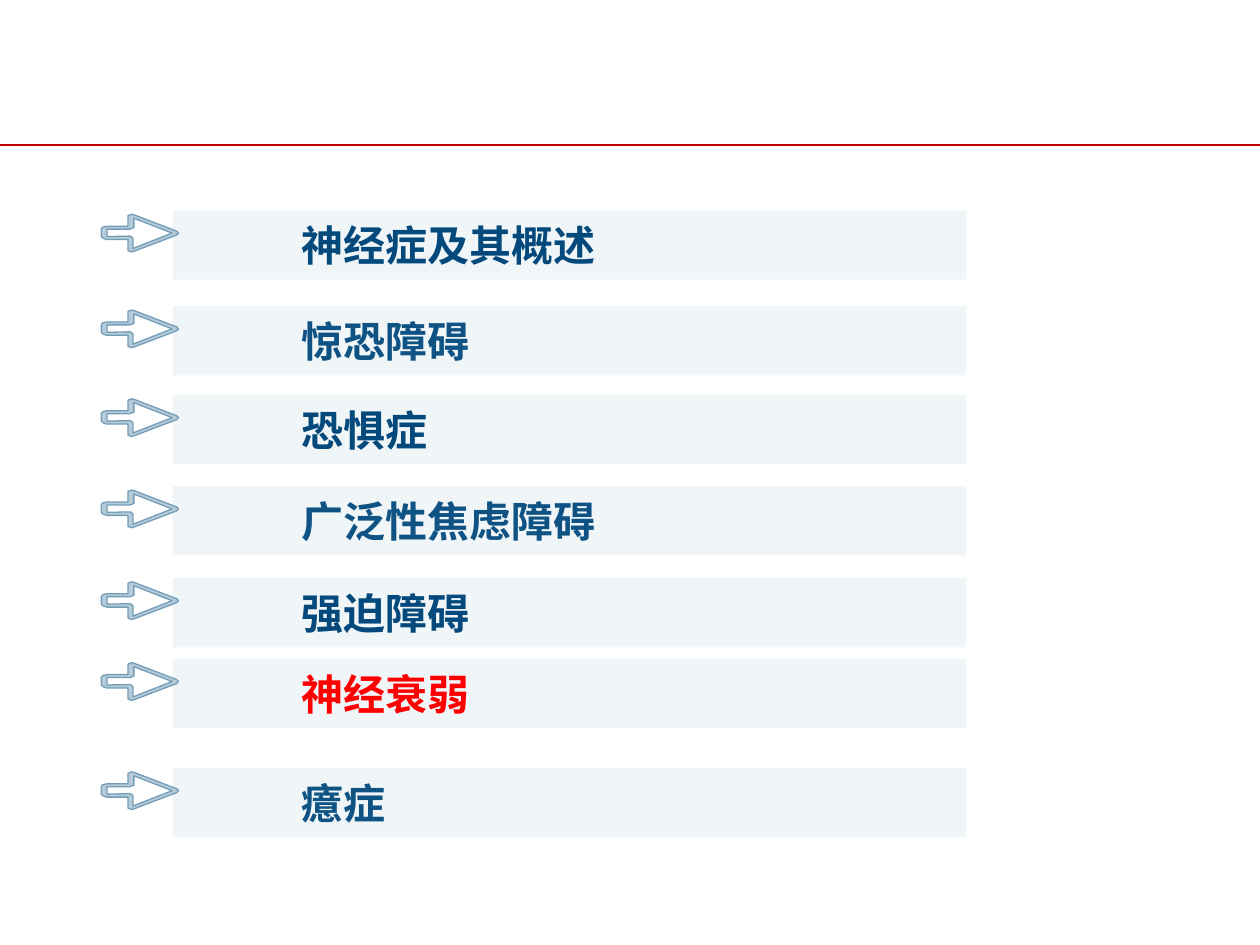
from dataclasses import dataclass

from lxml.etree import SubElement
from pptx import Presentation
from pptx.dml.color import RGBColor
from pptx.enum.shapes import MSO_CONNECTOR, MSO_SHAPE
from pptx.enum.text import MSO_ANCHOR, PP_ALIGN
from pptx.oxml.ns import qn
from pptx.shapes.autoshape import Shape
from pptx.shapes.shapetree import GroupShapes
from pptx.slide import Slide
from pptx.util import Cm, Pt


@dataclass(frozen=True)
class Theme:
    font: str = "Arial"
    item_size: float = 24
    rule_width: float = 1.5
    arrow_width: float = 0.75
    rule: str = "C00000"
    bar: str = "F0F5F7"
    arrow: str = "B5CBD9"
    arrow_edge: str = "739DB7"
    navy: str = "03497C"
    blue: str = "0F5385"
    current: str = "FF0000"


@dataclass(frozen=True)
class Topic:
    text: str
    top: float
    color: str


THEME = Theme()
SLIDE_W, SLIDE_H = 25.4, 19.05
RULE_Y = 2.92
BAR_LEFT, BAR_W, BAR_H = 3.48, 16.0, 1.4
ARROW_LEFT, ARROW_DROP = 2.04, 0.08

TOPICS = [
    Topic("神经症及其概述", 4.24, THEME.navy),
    Topic("惊恐障碍", 6.17, THEME.blue),
    Topic("恐惧症", 7.96, THEME.navy),
    Topic("广泛性焦虑障碍", 9.8, THEME.blue),
    Topic("强迫障碍", 11.65, THEME.navy),
    Topic("神经衰弱", 13.28, THEME.current),
    Topic("癔症", 15.48, THEME.blue),
]

# Arrow contours in hundredths of a centimetre
ARROW_OUTER = [
    (156, 38), (152, 34), (66, 1), (61, 0), (54, 3), (54, 24), (12, 24),
    (3, 26), (0, 30), (0, 44), (3, 48), (11, 51), (54, 51), (54, 73),
    (61, 76), (68, 74), (152, 42),
]
ARROW_INNER = [
    (64, 69), (64, 48), (59, 44), (12, 45), (12, 30), (58, 30), (66, 27),
    (66, 8), (143, 38),
]


def rgb(color: str) -> RGBColor:
    return RGBColor.from_string(color)


def write(sp: Shape, text: str, *, size: float, color: str, bold: bool = False) -> None:
    tf = sp.text_frame
    tf.word_wrap = True
    tf.vertical_anchor = MSO_ANCHOR.MIDDLE
    tf.margin_left, tf.margin_right = Cm(2.59), Cm(0.61)
    tf.margin_top = tf.margin_bottom = Cm(0.13)
    p = tf.paragraphs[0]
    p.alignment = PP_ALIGN.LEFT
    r = p.add_run()
    r.text = text
    r.font.name = THEME.font
    r.font.size = Pt(size)
    r.font.bold = bold
    r.font.color.rgb = rgb(color)


def add_rule(s: Slide) -> None:
    line = s.shapes.add_connector(
        MSO_CONNECTOR.STRAIGHT, Cm(0), Cm(RULE_Y), Cm(SLIDE_W), Cm(RULE_Y))
    line.line.color.rgb = rgb(THEME.rule)
    line.line.width = Pt(THEME.rule_width)
    SubElement(line._element.spPr, qn("a:effectLst"))


def add_arrow(shapes: GroupShapes, left: float, top: float) -> None:
    """Draw a hollow arrow: an outline with a second contour cut out of it."""
    builder = shapes.build_freeform(*ARROW_OUTER[0], scale=Cm(0.01))
    builder.add_line_segments(ARROW_OUTER[1:], close=True)
    builder.move_to(*ARROW_INNER[0])
    builder.add_line_segments(ARROW_INNER[1:], close=True)
    sp = builder.convert_to_shape(Cm(left), Cm(top))
    sp.shadow.inherit = False
    sp.fill.solid()
    sp.fill.fore_color.rgb = rgb(THEME.arrow)
    sp.line.color.rgb = rgb(THEME.arrow_edge)
    sp.line.width = Pt(THEME.arrow_width)


def add_topic(s: Slide, topic: Topic) -> None:
    shapes = s.shapes.add_group_shape().shapes
    sp = shapes.add_shape(
        MSO_SHAPE.RECTANGLE, Cm(BAR_LEFT), Cm(topic.top), Cm(BAR_W), Cm(BAR_H))
    sp.shadow.inherit = False
    sp.fill.solid()
    sp.fill.fore_color.rgb = rgb(THEME.bar)
    sp.line.fill.background()
    write(sp, topic.text, size=THEME.item_size, color=topic.color, bold=True)
    add_arrow(shapes, ARROW_LEFT, topic.top + ARROW_DROP)


def main() -> None:
    prs = Presentation()
    prs.slide_width, prs.slide_height = Cm(SLIDE_W), Cm(SLIDE_H)
    s = prs.slides.add_slide(prs.slide_layouts[6])
    add_rule(s)
    for topic in TOPICS:
        add_topic(s, topic)
    prs.save("out.pptx")


if __name__ == "__main__":
    main()
